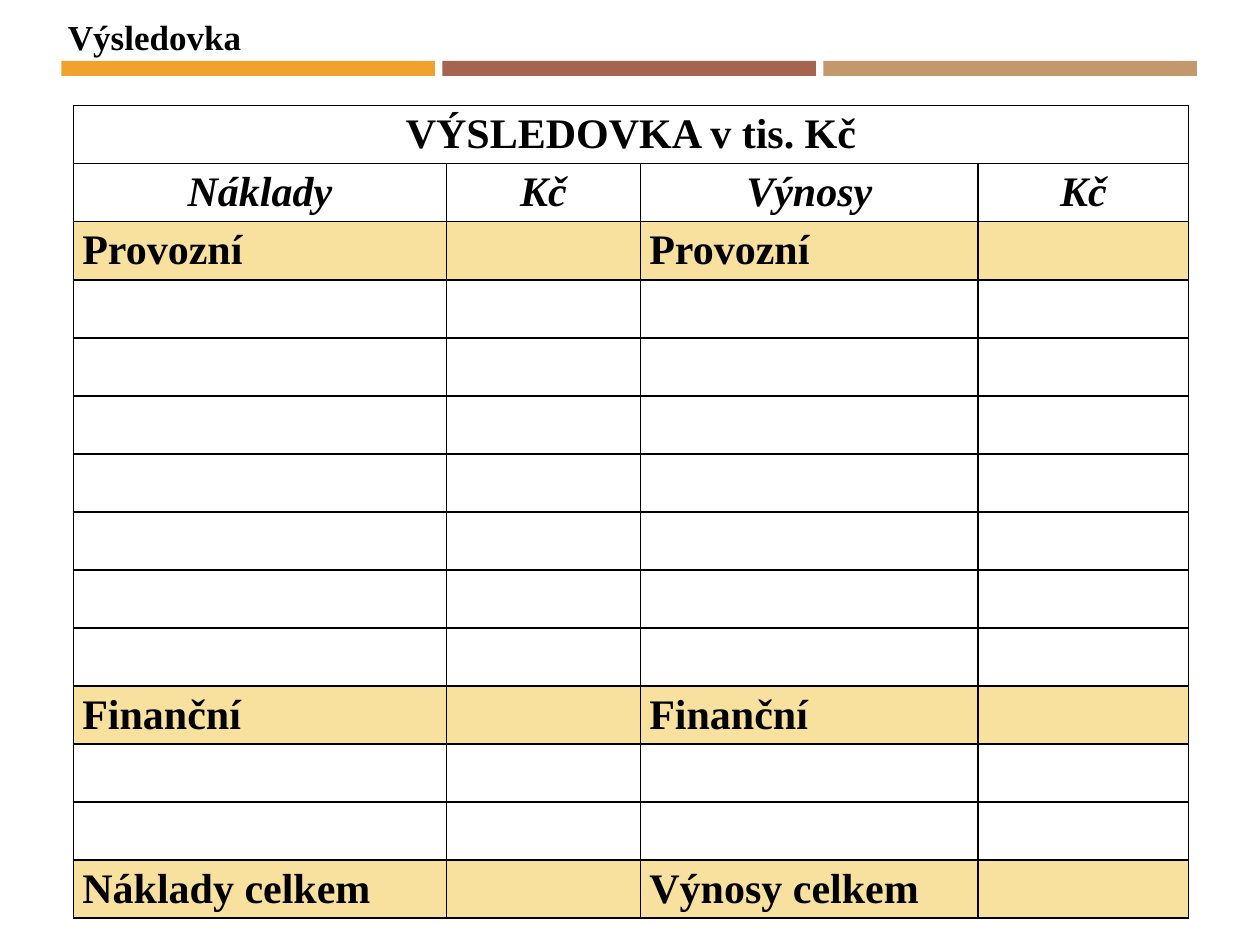
from dataclasses import dataclass

from lxml.etree import SubElement
from pptx import Presentation
from pptx.dml.color import RGBColor
from pptx.enum.shapes import MSO_SHAPE
from pptx.enum.text import MSO_ANCHOR, MSO_AUTO_SIZE, PP_ALIGN
from pptx.oxml.ns import qn
from pptx.util import Cm, Pt


@dataclass(frozen=True)
class Theme:
    font: str = "Times New Roman"
    ink: str = "000000"
    band: str = "F8E19F"
    bars: tuple = ("F0A22E", "A5644E", "C3986D")
    title: int = 20
    body: int = 24
    border: float = 1


theme = Theme()


def style_text(p, size, italic=False):
    for r in p.runs:
        r.font.name = theme.font
        r.font.size = Pt(size)
        r.font.bold = True
        r.font.italic = italic
        r.font.color.rgb = RGBColor.from_string(theme.ink)


def add_borders(cell):
    tc_pr = cell._tc.get_or_add_tcPr()
    for side in ("lnL", "lnR", "lnT", "lnB"):
        ln = SubElement(tc_pr, qn(f"a:{side}"), w=str(Pt(theme.border)))
        fill = SubElement(ln, qn("a:solidFill"))
        SubElement(fill, qn("a:srgbClr"), val=theme.ink)


prs = Presentation()
prs.slide_width, prs.slide_height = Cm(25.4), Cm(19.05)
s = prs.slides.add_slide(prs.slide_layouts[6])

for i, color in enumerate(theme.bars):
    sp = s.shapes.add_shape(MSO_SHAPE.RECTANGLE, Cm(1.24 + i * 7.68), Cm(1.23), Cm(7.53), Cm(0.3))
    sp.shadow.inherit = False
    sp.fill.solid()
    sp.fill.fore_color.rgb = RGBColor.from_string(color)
    sp.line.fill.background()

tf = s.shapes.add_textbox(Cm(1.12), Cm(0.18), Cm(4.04), Cm(1.12)).text_frame
tf.word_wrap = False
tf.auto_size = MSO_AUTO_SIZE.SHAPE_TO_FIT_TEXT
tf.text = "Výsledovka"
style_text(tf.paragraphs[0], theme.title)

widths = (7.52, 3.91, 6.81, 4.24)
row_count, row_height = 14, 1.17
labels = {
    0: ("VÝSLEDOVKA v tis. Kč", "", "", ""),
    1: ("Náklady", "Kč", "Výnosy", "Kč"),
    2: ("Provozní", "", "Provozní", ""),
    10: ("Finanční", "", "Finanční", ""),
    13: ("Náklady celkem", "", "Výnosy celkem", ""),
}

table = s.shapes.add_table(
    row_count, len(widths), Cm(1.48), Cm(2.13), Cm(sum(widths)), Cm(row_count * row_height)
).table
table.first_row = False
table.horz_banding = False
for column, width in zip(table.columns, widths):
    column.width = Cm(width)
table.cell(0, 0).merge(table.cell(0, 3))

for y, row in enumerate(table.rows):
    row.height = Cm(row_height)
    is_header = y < 2
    texts = labels.get(y, ("",) * len(widths))
    for cell, text in zip(row.cells, texts):
        add_borders(cell)
        if y in labels and not is_header:
            cell.fill.solid()
            cell.fill.fore_color.rgb = RGBColor.from_string(theme.band)
        else:
            cell.fill.background()
        cell.margin_left = cell.margin_right = Cm(0.18)
        cell.margin_top = cell.margin_bottom = Cm(0)
        cell.vertical_anchor = MSO_ANCHOR.MIDDLE
        if text:
            cell.text_frame.text = text
            p = cell.text_frame.paragraphs[0]
            p.alignment = PP_ALIGN.CENTER if is_header else PP_ALIGN.JUSTIFY
            style_text(p, theme.body, italic=y == 1)

prs.save("out.pptx")
